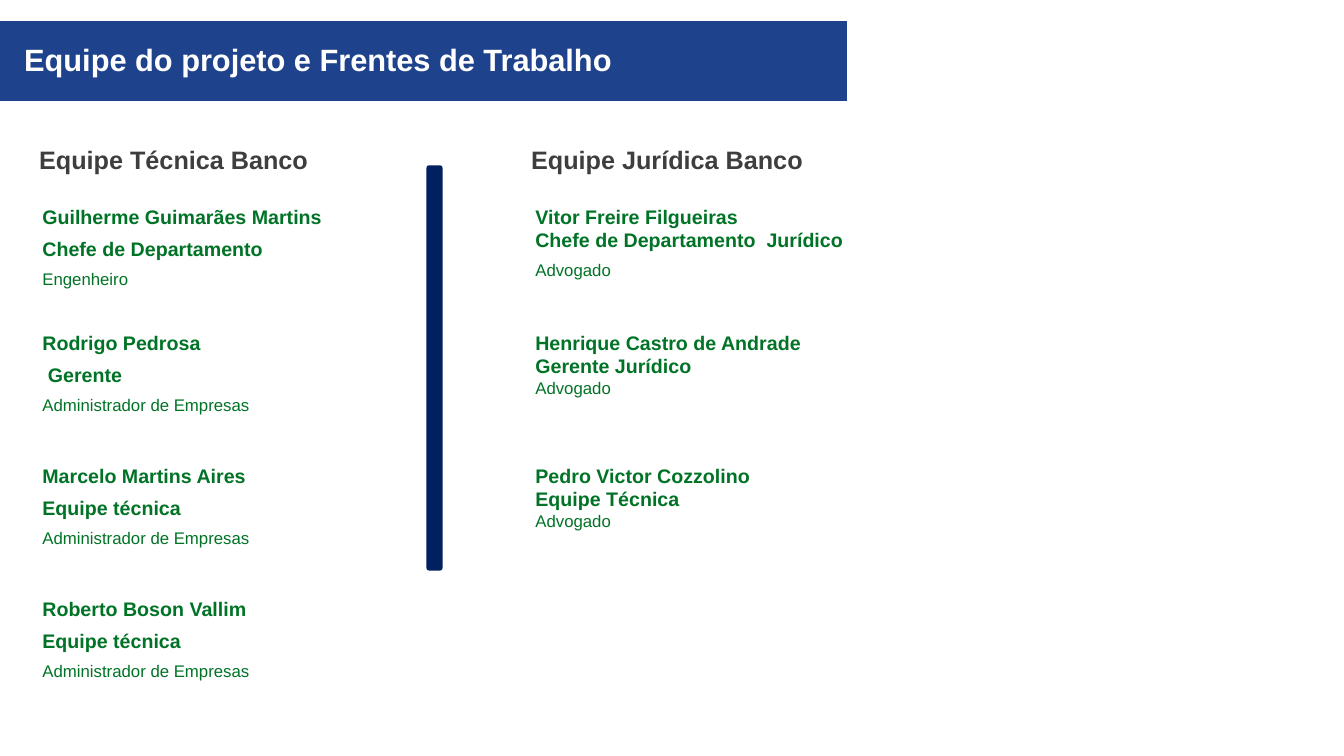
"""Build the project team slide with its technical and legal columns."""
from pptx import Presentation
from pptx.dml.color import RGBColor
from pptx.enum.shapes import MSO_SHAPE
from pptx.enum.text import MSO_ANCHOR, MSO_AUTO_SIZE, PP_ALIGN
from pptx.util import Inches, Pt

RECTANGLE, ROUNDED = MSO_SHAPE.RECTANGLE, MSO_SHAPE.ROUNDED_RECTANGLE
TOP, LEFT, GROW = MSO_ANCHOR.TOP, PP_ALIGN.LEFT, MSO_AUTO_SIZE.SHAPE_TO_FIT_TEXT

THEME = {
    "font": "Arial",
    "band": RGBColor.from_string("1E428B"),
    "divider": RGBColor.from_string("002060"),
    "title": {"size": 22, "bold": True, "color": RGBColor.from_string("FFFFFF")},
    "heading": {"size": 18, "bold": True, "color": RGBColor.from_string("3E3E3E")},
    "person": {"size": 14, "bold": True, "color": RGBColor.from_string("007326")},
    "degree": {"size": 12, "bold": False, "color": RGBColor.from_string("007326")},
}

ROW_TOPS = [1.98, 3.23, 4.55, 5.87]
TEAMS = [
    {"heading": "Equipe Técnica Banco", "heading_at": (0.29, 1.38, 3.01, 0.4),
     "left": 0.37, "members": [
        (5.22, 1.03, (6, 6), ["Guilherme Guimarães Martins", "Chefe de Departamento", "Engenheiro"]),
        (4.51, 1.03, (6, 6), ["Rodrigo Pedrosa", " Gerente", "Administrador de Empresas"]),
        (4.51, 1.03, (6, 6), ["Marcelo Martins Aires", "Equipe técnica", "Administrador de Empresas"]),
        (4.51, 1.03, (6, 6), ["Roberto Boson Vallim", "Equipe técnica", "Administrador de Empresas"])]},
    {"heading": "Equipe Jurídica Banco", "heading_at": (5.17, 1.38, 3.03, 0.4),
     "left": 5.26, "members": [
        (3.53, 0.89, (0, 6), ["Vitor Freire Filgueiras", "Chefe de Departamento  Jurídico", "Advogado"]),
        (2.83, 1.01, (0, 0), ["Henrique Castro de Andrade", "Gerente Jurídico", "Advogado"]),
        (2.98, 0.77, (0, 0), ["Pedro Victor Cozzolino", "Equipe Técnica", "Advogado"])]},
]


def write_lines(box, lines, styles, gaps, wrap, inset_x, inset_y):
    """Fill a box with one styled paragraph per line."""
    frame = box.text_frame
    settings = {"word_wrap": wrap, "auto_size": GROW, "vertical_anchor": TOP,
                "margin_left": Inches(inset_x), "margin_right": Inches(inset_x),
                "margin_top": Inches(inset_y), "margin_bottom": Inches(inset_y)}
    for name, value in settings.items():
        setattr(frame, name, value)
    for index, (line, style, gap) in enumerate(zip(lines, styles, gaps)):
        para = frame.add_paragraph() if index else frame.paragraphs[0]
        para.alignment = LEFT
        para.space_before = Pt(gap)
        span = para.add_run()
        span.text = line
        look = THEME[style]
        for name, value in {"name": THEME["font"], "size": Pt(look["size"]),
                            "bold": look["bold"]}.items():
            setattr(span.font, name, value)
        span.font.color.rgb = look["color"]


deck = Presentation()
deck.slide_width, deck.slide_height = Inches(13.33), Inches(7.5)
page = deck.slides.add_slide(deck.slide_layouts[5])

bars = []
for preset, place, color in [(RECTANGLE, (0, 0.21, 8.4, 0.79), "band"),
                             (ROUNDED, (4.23, 1.64, 0.16, 4.02), "divider")]:
    bar = page.shapes.add_shape(preset, *map(Inches, place))
    bar.shadow.inherit = False
    bar.fill.solid()
    bar.fill.fore_color.rgb = THEME[color]
    bar.line.fill.background()
    bars.append(bar)

title = page.shapes.title
for name, value in {"left": 0.2, "top": 0.36, "width": 6, "height": 0.45}.items():
    setattr(title, name, Inches(value))
bars[0].element.addnext(title.element)
write_lines(title, ["Equipe do projeto e Frentes de Trabalho"], ["title"], [0], False, 0.04, 0.04)

for team in TEAMS:
    heading = page.shapes.add_textbox(*map(Inches, team["heading_at"]))
    write_lines(heading, [team["heading"]], ["heading"], [0], False, 0.1, 0.05)
    for top, (width, height, gaps, lines) in zip(ROW_TOPS, team["members"]):
        card = page.shapes.add_textbox(*map(Inches, (team["left"], top, width, height)))
        write_lines(card, lines, ["person", "person", "degree"], (0, *gaps), True, 0.05, 0.05)

deck.save("out.pptx")
